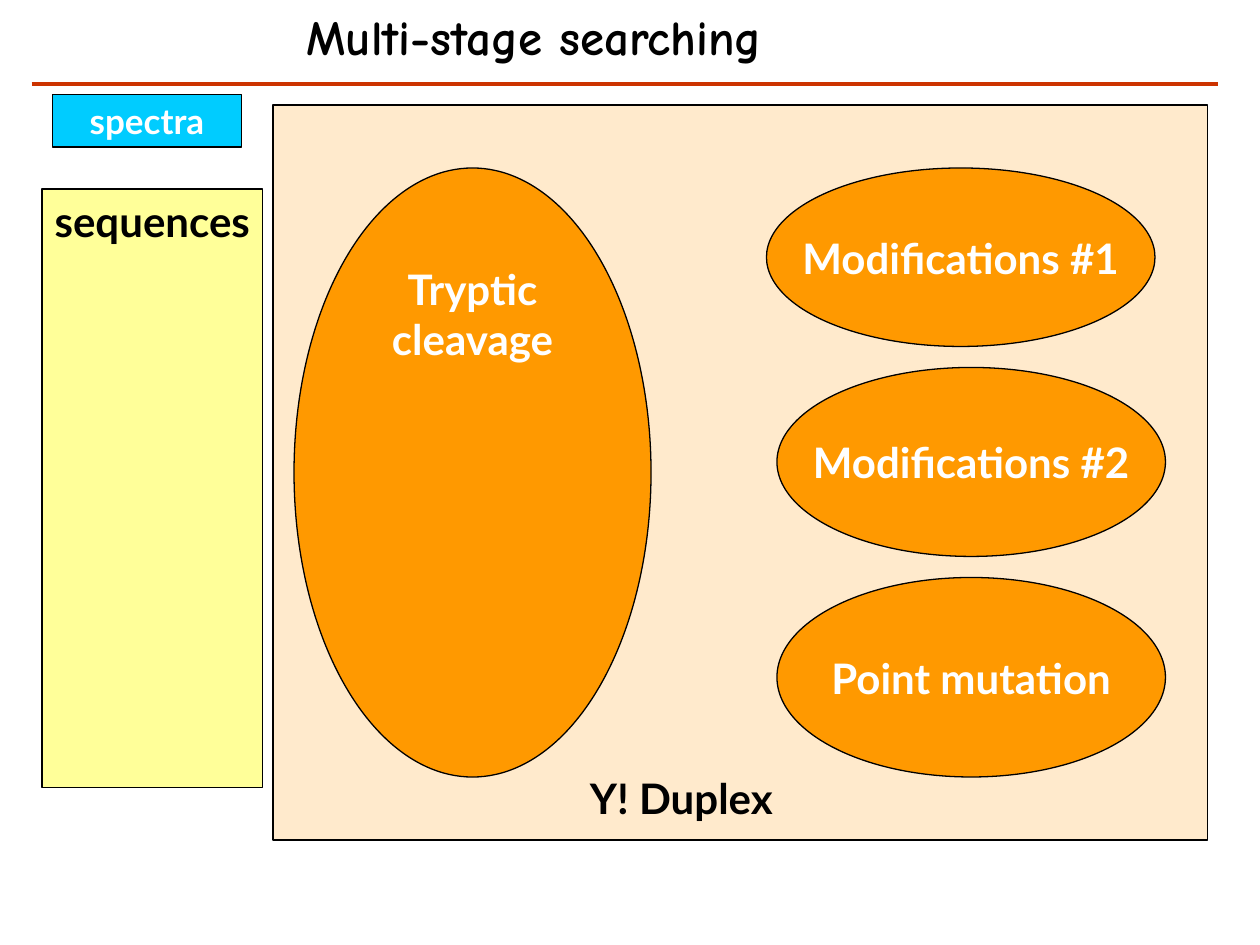
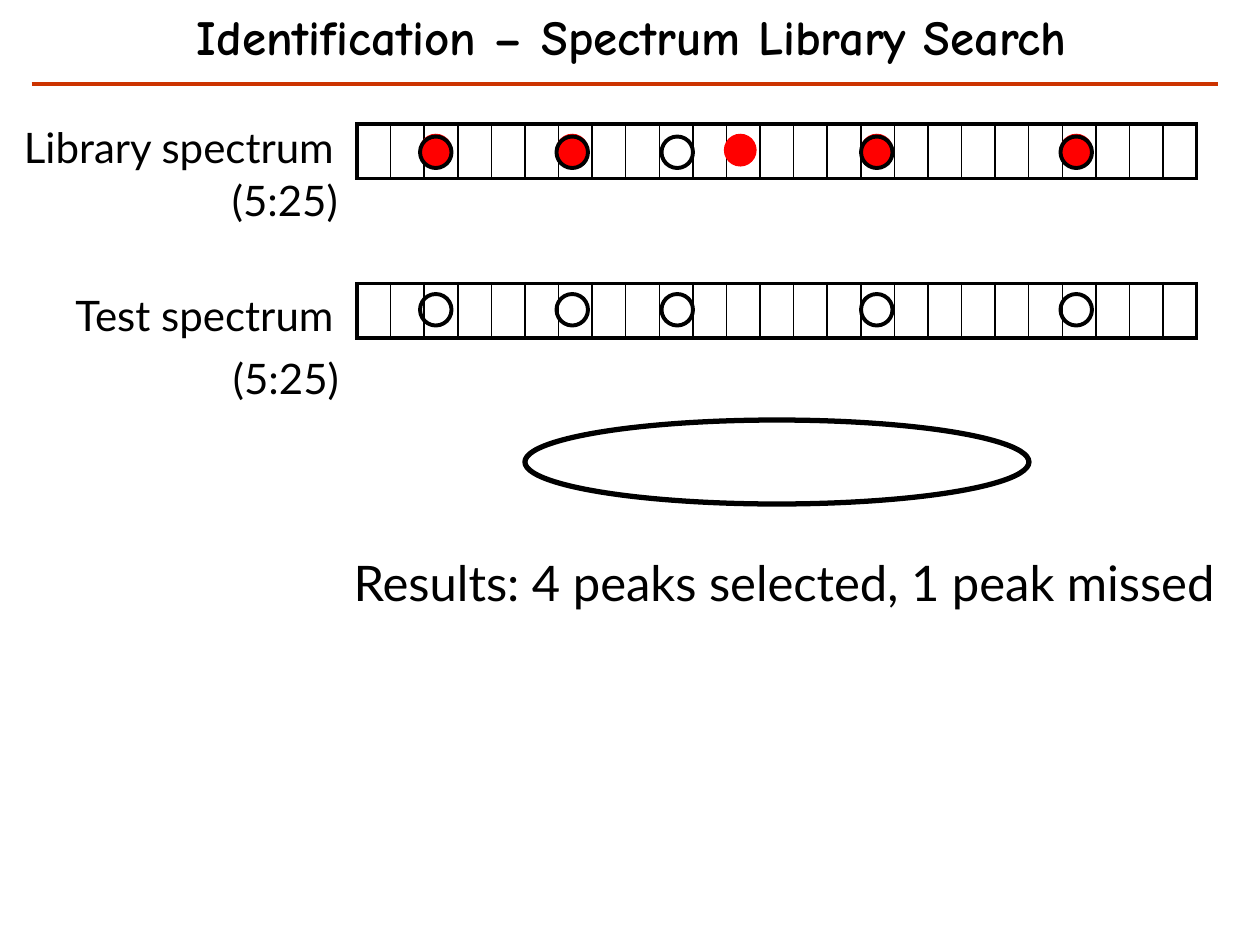
from lxml import etree
from pptx import Presentation
from pptx.dml.color import RGBColor
from pptx.enum.shapes import MSO_CONNECTOR, MSO_SHAPE
from pptx.enum.text import MSO_ANCHOR, MSO_AUTO_SIZE, PP_ALIGN
from pptx.oxml.ns import qn
from pptx.util import Pt

RECT, OVAL = MSO_SHAPE.RECTANGLE, MSO_SHAPE.OVAL
STRAIGHT = MSO_CONNECTOR.STRAIGHT
TOP, MIDDLE = MSO_ANCHOR.TOP, MSO_ANCHOR.MIDDLE
LEFT, CENTER = PP_ALIGN.LEFT, PP_ALIGN.CENTER
GROW = MSO_AUTO_SIZE.SHAPE_TO_FIT_TEXT

BLACK = RGBColor(0x00, 0x00, 0x00)
WHITE = RGBColor(0xFF, 0xFF, 0xFF)
RED = RGBColor(0xFF, 0x00, 0x00)
RUST = RGBColor(0xCC, 0x33, 0x00)
ORANGE = RGBColor(0xFF, 0x99, 0x00)
YELLOW = RGBColor(0xFF, 0xFF, 0x99)
CYAN = RGBColor(0x00, 0xCC, 0xFF)

PX = 7620
WIDE, HIGH = 1200, 900
BINS, BIN = 25, 32
DOT = 30
MATCHED = (400, 530, 820, 1010)
MISSED, STRAY = 630, 690

TITLE = {"name": "Comic Neue", "size": Pt(28), "bold": True}
BOLD = {"name": "Lato", "size": Pt(24), "bold": True}
SMALL = {**BOLD, "size": Pt(20)}
PLAIN = {**BOLD, "bold": False}
LARGE = {**PLAIN, "size": Pt(28)}


def emu(*sizes):
    return [size * PX for size in sizes]


def write(frame, text, form, color, align, anchor=TOP):
    frame.word_wrap = False
    frame.vertical_anchor = anchor
    frame.text = text
    for para in frame.paragraphs:
        para.alignment = align
        for run in para.runs:
            for key, value in form.items():
                setattr(run.font, key, value)
            run.font.color.rgb = color


def paint(fill, color):
    if color is None:
        fill.background()
    else:
        fill.solid()
        fill.fore_color.rgb = color


def label(shapes, text, box, form, align=LEFT):
    frame = shapes.add_textbox(*emu(*box)).text_frame
    write(frame, text, form, BLACK, align)
    frame.auto_size = GROW


def figure(shapes, kind, box, fill=None, line=BLACK, weight=0.75):
    shape = shapes.add_shape(kind, *emu(*box))
    shape.shadow.inherit = False
    paint(shape.fill, fill)
    shape.line.color.rgb = line
    shape.line.width = Pt(weight)
    return shape


def block(shapes, kind, box, fill, text, form=BOLD, color=WHITE, anchor=MIDDLE):
    shape = figure(shapes, kind, box, fill)
    write(shape.text_frame, text, form, color, CENTER, anchor)


def fade(shape, percent):
    color = shape.fill._xPr.find(qn("a:solidFill"))[0]
    etree.SubElement(color, qn("a:alpha"), val=str(percent * 1000))


def header(shapes, text, box, align):
    label(shapes, text, box, TITLE, align)
    rule = shapes.add_connector(STRAIGHT, *emu(30, 80, 1160, 80))
    rule.line.color.rgb = RUST
    rule.line.width = Pt(2.5)
    etree.SubElement(rule._element.spPr, qn("a:effectLst"))


def edge(cell, side, weight):
    props = cell._tc.get_or_add_tcPr()
    line = etree.SubElement(props, qn("a:ln" + side), w=str(Pt(weight)))
    solid = etree.SubElement(line, qn("a:solidFill"))
    etree.SubElement(solid, qn("a:srgbClr"), val=str(BLACK))


def strip(shapes, top, fill=None):
    box = emu(340, top, BINS * BIN, 52)
    table = shapes.add_table(1, BINS, *box).table
    table.first_row = table.horz_banding = False
    for col, cell in enumerate(table.iter_cells()):
        table.columns[col].width = BIN * PX
        sides = {
            "L": 2.25 if col == 0 else 1,
            "R": 2.25 if col == BINS - 1 else 1,
            "T": 2.25,
            "B": 2.25,
        }
        for side, weight in sides.items():
            edge(cell, side, weight)
        paint(cell.fill, fill)


def peaks(shapes, lefts, top, fill=None, line=BLACK, weight=2.25):
    for left in lefts:
        figure(shapes, OVAL, (left, top, DOT, DOT), fill, line, weight)


def stages(shapes):
    engine = figure(shapes, RECT, (260, 100, 890, 700), ORANGE)
    fade(engine, 20)
    block(shapes, RECT, (40, 180, 210, 570), YELLOW, "sequences", color=BLACK, anchor=TOP)
    block(shapes, RECT, (50, 90, 180, 50), CYAN, "spectra", SMALL)
    block(shapes, OVAL, (280, 160, 340, 580), ORANGE, "Tryptic\ncleavage", anchor=TOP)
    for text, left, top, height in (
        ("Modifications #1", 730, 160, 170),
        ("Modifications #2", 740, 350, 180),
        ("Point mutation", 740, 550, 190),
    ):
        block(shapes, OVAL, (left, top, 370, height), ORANGE, text)
    label(shapes, "Y! Duplex", (550, 730, 238, 60), BOLD)
    header(shapes, "Multi-stage searching", (280, 0, 523, 68), LEFT)


def library(shapes):
    strip(shapes, 118, WHITE)
    strip(shapes, 270)
    for text, box, form in (
        ("Library spectrum", (11, 110, 329, 60), PLAIN),
        ("(5:25)", (209, 160, 132, 60), PLAIN),
        ("Test spectrum", (60, 270, 280, 60), PLAIN),
        ("(5:25)", (210, 330, 132, 60), PLAIN),
        ("Results: 4 peaks selected, 1 peak missed", (325, 520, 875, 68), LARGE),
    ):
        label(shapes, text, box, form)
    peaks(shapes, (*MATCHED, STRAY), 128, RED, RED, 0.75)
    peaks(shapes, MATCHED, 130, RED)
    peaks(shapes, [MISSED], 130)
    peaks(shapes.add_group_shape().shapes, (*MATCHED, MISSED), 280)
    figure(shapes, OVAL, (500, 400, 480, 80), weight=3)
    header(shapes, "Identification – Spectrum Library Search", (113, 0, 977, 68), CENTER)


def main():
    deck = Presentation()
    deck.slide_width, deck.slide_height = emu(WIDE, HIGH)
    for build in (stages, library):
        build(deck.slides.add_slide(deck.slide_layouts[6]).shapes)
    deck.save("out.pptx")


if __name__ == "__main__":
    main()
